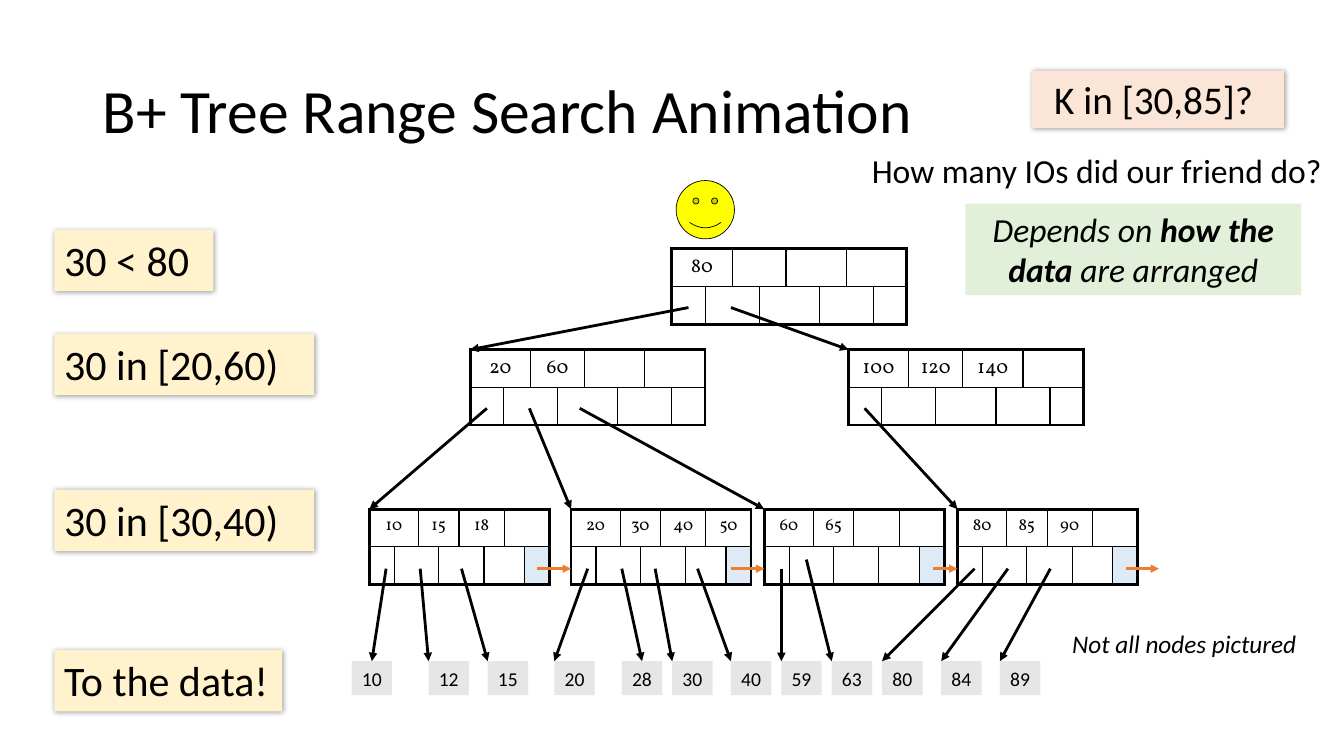
from dataclasses import dataclass
from typing import Optional

from lxml.etree import SubElement
from pptx import Presentation
from pptx.dml.color import RGBColor
from pptx.enum.shapes import MSO_CONNECTOR, MSO_SHAPE
from pptx.enum.text import MSO_ANCHOR, PP_ALIGN
from pptx.oxml.ns import qn
from pptx.util import Cm, Pt

BLACK = RGBColor(0x00, 0x00, 0x00)
ORANGE = RGBColor(0xED, 0x7D, 0x31)
GREY = RGBColor(0xE7, 0xE6, 0xE6)
BLUE = RGBColor(0xDE, 0xEB, 0xF7)
PEACH = RGBColor(0xFB, 0xE5, 0xD6)
CREAM = RGBColor(0xFF, 0xF2, 0xCC)
GREEN = RGBColor(0xE2, 0xF0, 0xD9)
YELLOW = RGBColor(0xFF, 0xFF, 0x00)

ROW_HEIGHT = 0.95
WIDE_COLUMNS = (0, 4, 7)
KEY_SPANS = (2, 2, 2, 2)
POINTER_SPANS = (1, 2, 2, 2, 1)
LEAF_POINTER_Y = 14.33
DATA_TOP = 16.66


@dataclass
class Node:
    left: float
    top: float
    keys: tuple[str, ...]
    pointer: Optional[tuple[float, float]] = None  # start of the arrow from the parent
    next_x: Optional[float] = None  # start of the arrow to the next leaf

    @property
    def is_leaf(self) -> bool:
        return self.next_x is not None


@dataclass
class DataItem:
    key: str
    left: float
    pointer_x: float
    pointer_y: float = LEAF_POINTER_Y
    joined: bool = False  # arrow meets the middle of the top side


@dataclass
class Label:
    runs: tuple[str, ...]  # every second run is bold
    left: float
    top: float
    width: float
    height: float
    size: int
    fill: Optional[RGBColor] = None
    shadow: bool = False
    italic: bool = False
    align: PP_ALIGN = PP_ALIGN.LEFT
    anchor: MSO_ANCHOR = MSO_ANCHOR.TOP
    wrap: bool = True
    spacing: float = 1.0


NODES = [
    Node(16.93, 6.27, ("80",)),
    Node(11.85, 8.81, ("20", "60"), (17.35, 7.75)),
    Node(21.38, 8.81, ("100", "120", "140"), (18.42, 7.75)),
    Node(9.31, 12.83, ("10", "15", "18"), (12.27, 10.29), 13.54),
    Node(14.39, 12.83, ("20", "30", "40", "50"), (13.34, 10.29), 18.42),
    Node(19.26, 12.83, ("60", "65"), (14.61, 10.29), 23.5),
    Node(24.13, 12.83, ("80", "85", "90"), (21.79, 10.29), 28.37),
]
DATA = [
    DataItem("10", 8.86, 9.73, joined=True),
    DataItem("12", 10.8, 10.59),
    DataItem("15", 12.29, 11.63),
    DataItem("20", 13.97, 14.81),
    DataItem("28", 15.67, 15.67, joined=True),
    DataItem("30", 16.94, 16.51),
    DataItem("40", 18.42, 17.58),
    DataItem("59", 19.69, 19.69),
    DataItem("63", 20.96, 20.32, 14.1),
    DataItem("80", 22.23, 24.56),
    DataItem("84", 23.72, 25.4),
    DataItem("89", 25.2, 26.47),
]
STEPS = [("30 < 80", 5.79, 4.01), ("30 in [20,60)", 8.41, 6.55),
         ("30 in [30,40)", 12.34, 6.55), ("To the data!", 16.38, 5.74)]
LABELS = [
    Label(("B+ Tree Range Search Animation",), 2.34, 1.02, 29.21, 3.68, 44,
          anchor=MSO_ANCHOR.MIDDLE, spacing=0.9),
    Label(("K in [30,85]? ",), 26.01, 1.78, 6.35, 1.45, 28, PEACH, True, align=PP_ALIGN.CENTER),
    *(Label((text,), 1.37, top, width, 1.55, 30, CREAM, True) for text, top, width in STEPS),
    Label(("Not all nodes pictured",), 26.77, 15.72, 6.22, 1.02, 18, italic=True, wrap=False),
    Label(("How many IOs did our friend do?",), 21.39, 3.66, 12.5, 1.27, 24,
          align=PP_ALIGN.CENTER),
    Label(("Depends on ", "how the data", " are arranged"), 24.33, 5.13, 8.46, 2.31, 24,
          GREEN, italic=True, align=PP_ALIGN.CENTER),
]


def add_shadow(s) -> None:
    effects = SubElement(s._element.spPr, qn("a:effectLst"))
    outer = SubElement(effects, qn("a:outerShdw"), blurRad=str(Pt(4)), dist=str(Pt(1)),
                       dir="2700000", algn="tl", rotWithShape="0")
    color = SubElement(outer, qn("a:srgbClr"), val=str(BLACK))
    SubElement(color, qn("a:alpha"), val="40000")


def add_label(shapes, label: Label):
    box = Cm(label.left), Cm(label.top), Cm(label.width), Cm(label.height)
    if label.fill is None:
        s = shapes.add_textbox(*box)
    else:
        s = shapes.add_shape(MSO_SHAPE.RECTANGLE, *box)
        s.fill.solid()
        s.fill.fore_color.rgb = label.fill
        s.line.fill.background()
        if label.shadow:
            add_shadow(s)
        else:
            s.shadow.inherit = False
    tf = s.text_frame
    tf.word_wrap = label.wrap
    tf.vertical_anchor = label.anchor
    p = tf.paragraphs[0]
    p.alignment = label.align
    p.line_spacing = label.spacing
    p.font.name, p.font.size, p.font.italic = "Calibri", Pt(label.size), label.italic
    p.font.color.rgb = BLACK
    for i, text in enumerate(label.runs):
        r = p.add_run()
        r.text = text
        if i % 2:
            r.font.bold = True
    return s


def add_arrow(shapes, start: tuple[float, float], end: tuple[float, float],
              color: RGBColor = BLACK):
    c = shapes.add_connector(MSO_CONNECTOR.STRAIGHT, *map(Cm, start + end))
    c.line.color.rgb = color
    c.line.width = Pt(2)
    SubElement(c.line._get_or_add_ln(), qn("a:tailEnd"), type="triangle")
    SubElement(c._element.spPr, qn("a:effectLst"))
    return c


def set_borders(cell, thick_sides: str) -> None:
    """Draw the four borders, heavier on the sides named by L, R, T and B."""
    tc_pr = cell._tc.get_or_add_tcPr()
    for side in "LRTB":
        width = Pt(2.25 if side in thick_sides else 1)
        ln = SubElement(tc_pr, qn(f"a:ln{side}"), w=str(width))
        SubElement(SubElement(ln, qn("a:solidFill")), qn("a:srgbClr"), val=str(BLACK))


def add_node(shapes, node: Node) -> None:
    wide, narrow, size = (0.63, 0.51, 12) if node.is_leaf else (0.84, 0.68, 14)
    widths = [wide if i in WIDE_COLUMNS else narrow for i in range(8)]
    table = shapes.add_table(2, 8, Cm(node.left), Cm(node.top), Cm(sum(widths)),
                             Cm(2 * ROW_HEIGHT)).table
    table.first_row = table.horz_banding = False
    for column, width in zip(table.columns, widths):
        column.width = Cm(width)
    for row, spans in enumerate((KEY_SPANS, POINTER_SPANS)):
        first = 0
        for i, span in enumerate(spans):
            last = first + span - 1
            sides = "TB"[row] + "L" * (first == 0) + "R" * (last == 7)
            for column in range(first, last + 1):
                cell = table.cell(row, column)
                set_borders(cell, sides)
                cell.fill.background()
                p = cell.text_frame.paragraphs[0]
                p.font.name, p.font.size = "Vollkorn", Pt(size)
                p.font.color.rgb = BLACK
            cell = table.cell(row, first)
            if span > 1:
                cell.merge(table.cell(row, last))
            if row == 0 and i < len(node.keys):
                p = cell.text_frame.paragraphs[0]
                p.text = node.keys[i]
                p.alignment = PP_ALIGN.CENTER
                p.space_before = Pt(0.2 * size)
            first += span
    if node.is_leaf:
        cell.fill.solid()
        cell.fill.fore_color.rgb = BLUE


def main() -> None:
    prs = Presentation()
    prs.slide_width, prs.slide_height = Cm(33.87), Cm(19.05)
    shapes = prs.slides.add_slide(prs.slide_layouts[6]).shapes

    for node in NODES:
        add_node(shapes, node)
    for node in NODES:
        if node.pointer:
            add_arrow(shapes, node.pointer, (node.left, node.top))
    leaves = [node for node in NODES if node.is_leaf]
    next_lefts = [leaf.left for leaf in leaves[1:]] + [29.21]
    for leaf, next_left in zip(leaves, next_lefts):
        add_arrow(shapes, (leaf.next_x, LEAF_POINTER_Y), (next_left, LEAF_POINTER_Y), ORANGE)

    for item in DATA:
        s = add_label(shapes, Label((item.key,), item.left, DATA_TOP, 1.02, 0.86, 14, GREY,
                                    align=PP_ALIGN.CENTER, anchor=MSO_ANCHOR.MIDDLE, wrap=False))
        c = add_arrow(shapes, (item.pointer_x, item.pointer_y), (item.left, DATA_TOP))
        if item.joined:
            c.end_connect(s, 0)
    for label in LABELS:
        add_label(shapes, label)

    face = shapes.add_shape(MSO_SHAPE.SMILEY_FACE, Cm(17.04), Cm(4.55), Cm(1.47), Cm(1.47))
    face.shadow.inherit = False
    face.fill.solid()
    face.fill.fore_color.rgb = YELLOW
    face.line.color.rgb = BLACK
    face.line.width = Pt(0.5)
    prs.save("out.pptx")


if __name__ == "__main__":
    main()
